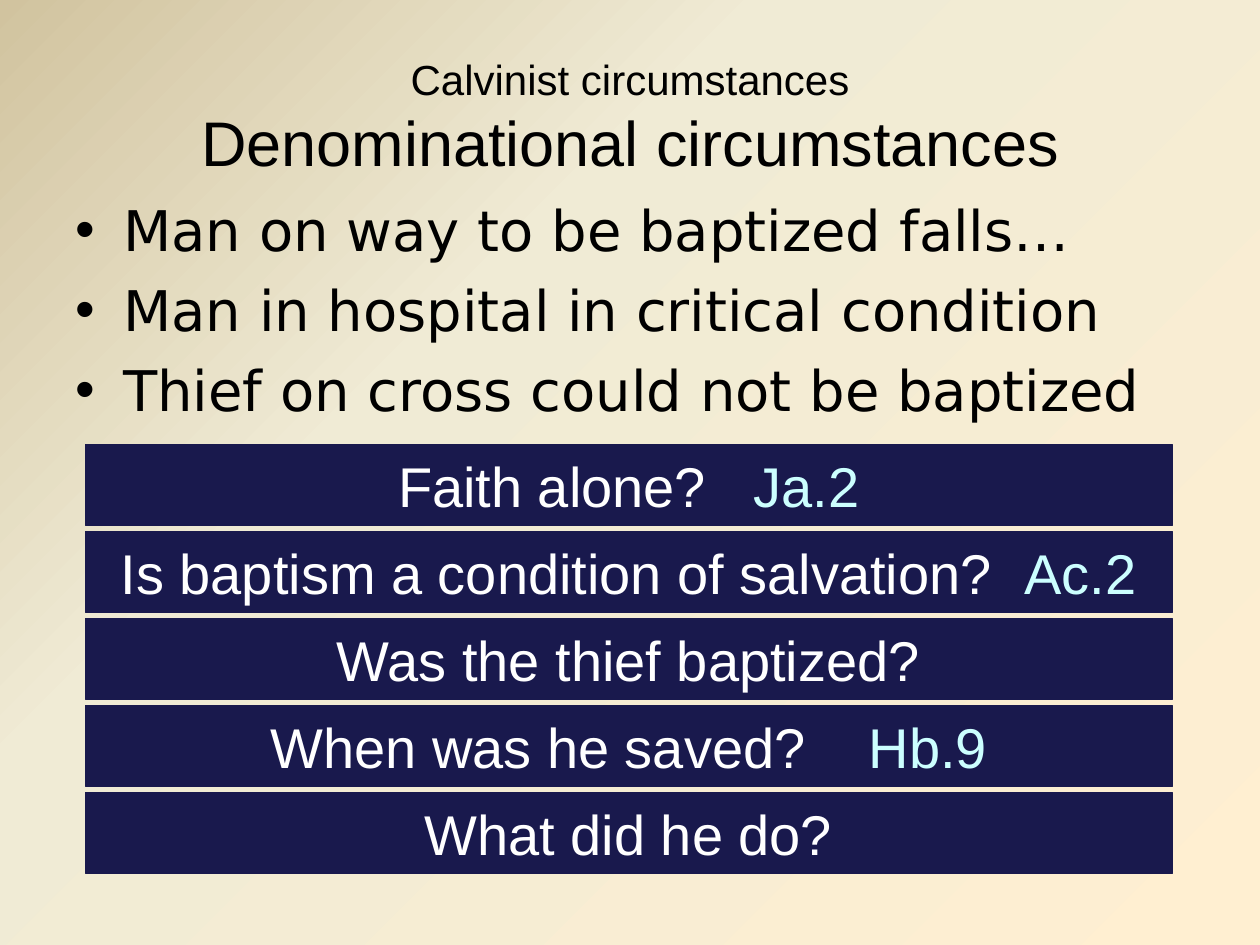
from copy import deepcopy

from lxml import etree
from pptx import Presentation
from pptx import util as u
from pptx.dml.color import RGBColor
from pptx.enum import shapes, text
from pptx.oxml.ns import qn

NAVY, WHITE, AQUA, BLACK = "19194D", "FFFFFF", "CCFFFF", "000000"


def rgb(value):
    return RGBColor.from_string(value)


def add_run(paragraph, words, color, size=32, name="Arial"):
    run = paragraph.add_run()
    run.text = words
    for key, value in {"size": u.Pt(size), "name": name}.items():
        setattr(run.font, key, value)
    run.font.color.rgb = rgb(color)


presentation = Presentation()
presentation.slide_width, presentation.slide_height = u.Inches(10), u.Inches(7.5)
slide = presentation.slides.add_slide(presentation.slide_layouts[6])
margin = u.Inches(0.5)
content_width = presentation.slide_width - 2 * margin

# Diagonal background gradient with a third stop
background = slide.background.fill
background.gradient()
background.gradient_angle = 315
stops = background.gradient_stops
first_stop = stops[0]._gs
first_stop.addnext(deepcopy(first_stop))
gradient = [(0, "D1C39F"), (0.35, "F0EBD5"), (1, "FFEFD1")]
for stop, (position, color) in zip(background.gradient_stops, gradient):
    stop.position = position
    stop.color.rgb = rgb(color)

# Title
title = slide.shapes.add_textbox(margin, u.Inches(0.3), content_width, u.Inches(1.25))
frame = title.text_frame
frame.word_wrap = True
frame.vertical_anchor = text.MSO_ANCHOR.MIDDLE
paragraph = frame.paragraphs[0]
paragraph.alignment = text.PP_ALIGN.CENTER
add_run(paragraph, "Calvinist circumstances", BLACK, 24)
paragraph.add_line_break()
add_run(paragraph, "Denominational circumstances", BLACK, 36)

# Bulleted circumstances
circumstances = [
    "Man on way to be baptized falls…",
    "Man in hospital in critical condition",
    "Thief on cross could not be baptized",
]
body = slide.shapes.add_textbox(margin, u.Inches(1.5), content_width, u.Inches(5.25))
frame = body.text_frame
frame.word_wrap = True
indent = u.Inches(0.38)
for index, words in enumerate(circumstances):
    paragraph = frame.add_paragraph() if index else frame.paragraphs[0]
    paragraph.space_before = u.Pt(7.4)
    add_run(paragraph, words, BLACK, name="DejaVu Sans")
    properties = paragraph._p.get_or_add_pPr()
    properties.set("marL", str(indent))
    properties.set("indent", str(-indent))
    etree.SubElement(properties, qn("a:buFont")).set("typeface", "Arial")
    etree.SubElement(properties, qn("a:buChar")).set("char", "•")

# Question bars, each with an optional scripture reference
questions = [
    ("Faith alone?   ", "Ja.2"),
    ("Is baptism a condition of salvation?  ", "Ac.2"),
    ("Was the thief baptized?", ""),
    ("When was he saved?    ", "Hb.9"),
    ("What did he do?", ""),
]
bar_top, bar_pitch = 3.53, 0.69
for row, (question, reference) in enumerate(questions):
    bar = slide.shapes.add_shape(
        shapes.MSO_SHAPE.RECTANGLE,
        u.Inches(0.68), u.Inches(bar_top + row * bar_pitch),
        u.Inches(8.62), u.Inches(0.64),
    )
    bar.shadow.inherit = False
    bar.fill.solid()
    bar.fill.fore_color.rgb = rgb(NAVY)
    bar.line.color.rgb = rgb(NAVY)
    bar.line.width = u.Pt(0.25)
    frame = bar.text_frame
    frame.word_wrap = True
    frame.vertical_anchor = text.MSO_ANCHOR.MIDDLE
    paragraph = frame.paragraphs[0]
    paragraph.alignment = text.PP_ALIGN.CENTER
    add_run(paragraph, question, WHITE)
    if reference:
        add_run(paragraph, reference, AQUA)

presentation.save("out.pptx")
